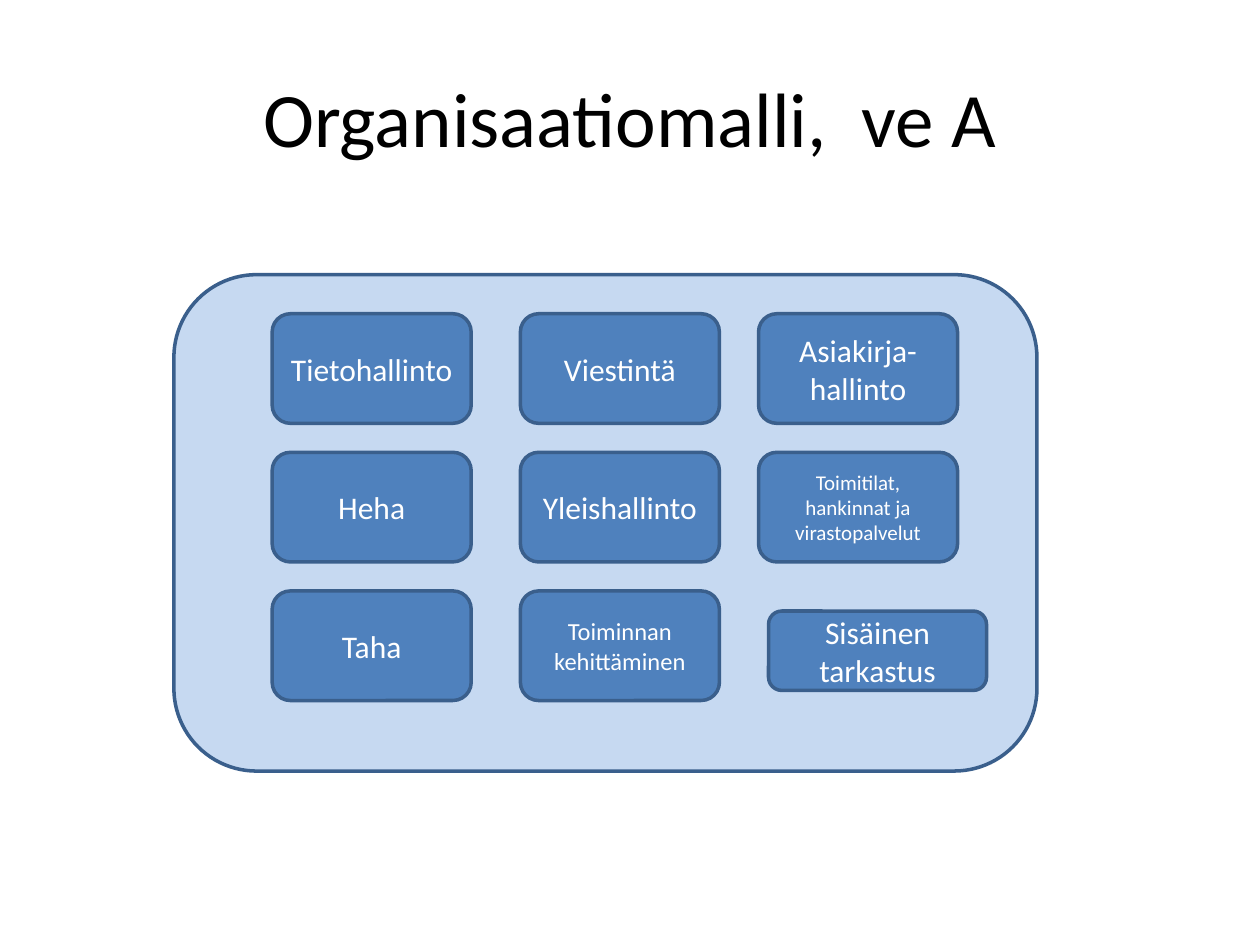
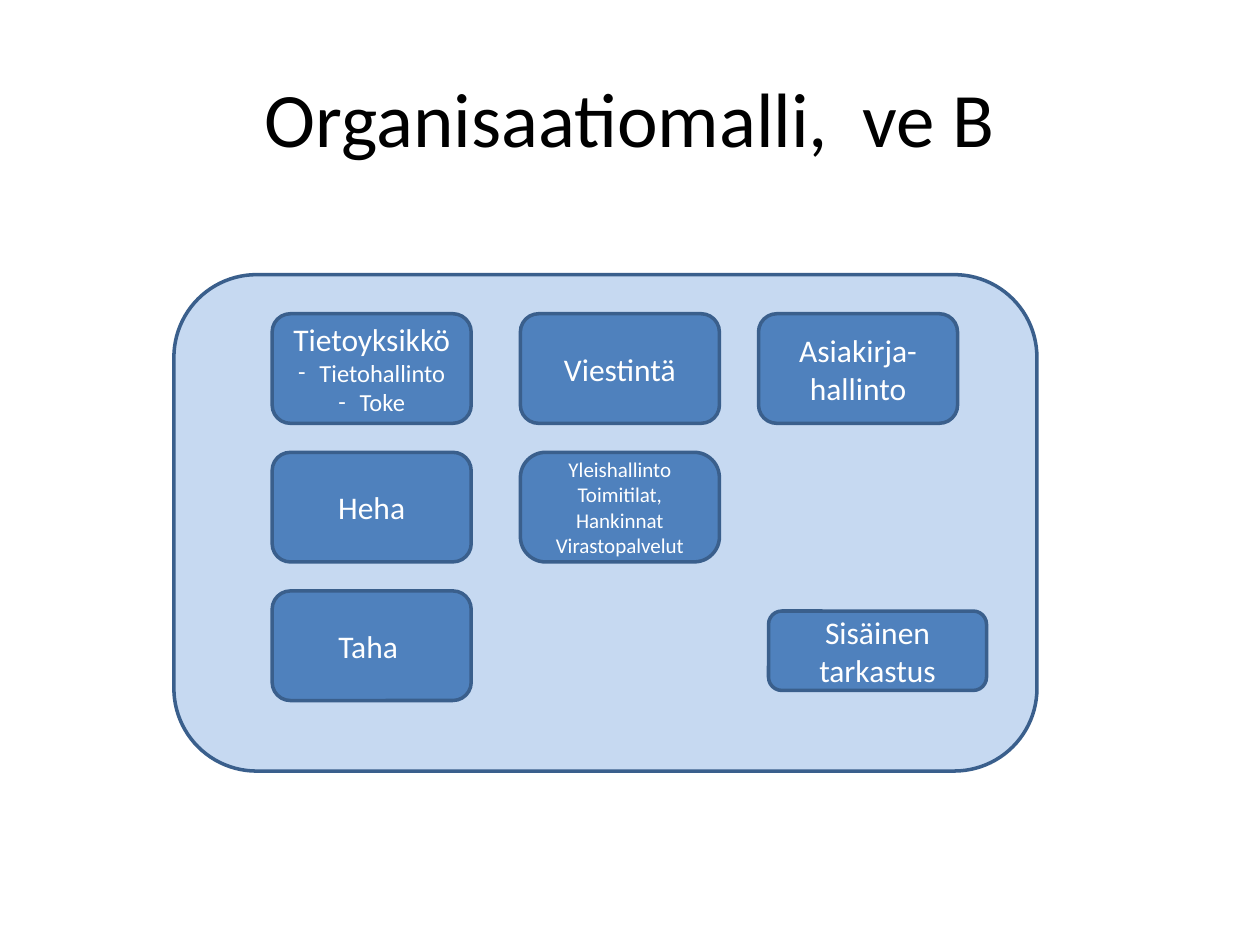
"""Builds two slides that compare organisation models A and B."""
from lxml.etree import SubElement
from pptx import Presentation
from pptx.dml.color import RGBColor
from pptx.enum.shapes import MSO_SHAPE
from pptx.enum.text import MSO_ANCHOR, PP_ALIGN
from pptx.oxml.ns import qn
from pptx.util import Inches, Pt

FONT = "Calibri"
PANEL_BLUE, UNIT_BLUE, OUTLINE_BLUE = "C6D9F1", "4F81BD", "3A5F8C"
WHITE, BLACK = "FFFFFF", "000000"
COLUMNS = [2.16, 4.13, 6.02]
ROWS = [2.49 + 1.1 * row for row in range(3)]
UNIT_WIDTH, UNIT_HEIGHT = 1.58, 0.87
BULLET_INDENT = Inches(0.17)


def colour(hex_value):
    return RGBColor.from_string(hex_value)


def add_box(slide, left, top, width, height, fill):
    box = slide.shapes.add_shape(
        MSO_SHAPE.ROUNDED_RECTANGLE,
        Inches(left), Inches(top), Inches(width), Inches(height))
    box.shadow.inherit = False
    box.fill.solid()
    box.fill.fore_color.rgb = colour(fill)
    box.line.color.rgb = colour(OUTLINE_BLUE)
    box.line.width = Pt(2)
    return box


SHARED_UNITS = {
    (0, 1): [("Heha", 18)],
    (1, 0): [("Viestintä", 18)],
    (2, 0): [("Asiakirja-", 18), ("hallinto", 18)],
}
MODELS = {
    "Organisaatiomalli,  ve A": {
        (0, 0): [("Tietohallinto", 18)],
        (0, 2): [("Taha", 18)],
        (1, 1): [("Yleishallinto", 18)],
        (1, 2): [("Toiminnan kehittäminen", 14)],
        (2, 1): [("Toimitilat, hankinnat ja virastopalvelut", 12)],
    },
    "Organisaatiomalli,  ve B": {
        (0, 0): [("Tietoyksikkö", 18), ("- Tietohallinto", 14), ("- Toke", 14)],
        (0, 2): [("Taha ", 18)],
        (1, 1): [(line, 12) for line in (
            "Yleishallinto", "Toimitilat,", "Hankinnat", "Virastopalvelut")],
    },
}

deck = Presentation()
deck.slide_width, deck.slide_height = Inches(10), Inches(7.5)

for heading, own_units in MODELS.items():
    slide = deck.slides.add_slide(deck.slide_layouts[5])
    title = slide.shapes.title
    title_place = {"left": 0.5, "top": 0.3, "width": 9, "height": 1.25}
    for side, length in title_place.items():
        setattr(title, side, Inches(length))
    title.text_frame.text = heading
    title.text_frame.vertical_anchor = MSO_ANCHOR.MIDDLE
    title_line = title.text_frame.paragraphs[0]
    title_line.alignment = PP_ALIGN.CENTER
    for attribute, value in {"name": FONT, "size": Pt(44)}.items():
        setattr(title_line.font, attribute, value)
    title_line.font.color.rgb = colour(BLACK)

    add_box(slide, 1.38, 2.18, 6.85, 3.94, PANEL_BLUE)

    units = [(COLUMNS[column], ROWS[row], UNIT_WIDTH, UNIT_HEIGHT, lines)
             for (column, row), lines in (SHARED_UNITS | own_units).items()]
    units.append((6.1, 4.85, 1.73, 0.63, [("Sisäinen tarkastus", 18)]))

    for left, top, width, height, lines in units:
        unit = add_box(slide, left, top, width, height, UNIT_BLUE)
        if len(lines) == 4:
            unit.adjustments[0] = 0.23
        frame = unit.text_frame
        frame.word_wrap = True
        frame.vertical_anchor = MSO_ANCHOR.MIDDLE
        for index, (wording, size) in enumerate(lines):
            paragraph = frame.add_paragraph() if index else frame.paragraphs[0]
            paragraph.alignment = PP_ALIGN.CENTER
            run = paragraph.add_run()
            run.text = wording.removeprefix("- ")
            for attribute, value in {"name": FONT, "size": Pt(size)}.items():
                setattr(run.font, attribute, value)
            run.font.color.rgb = colour(WHITE)
            if wording.startswith("- "):
                properties = paragraph._p.get_or_add_pPr()
                properties.set("marL", str(BULLET_INDENT))
                properties.set("indent", str(-BULLET_INDENT))
                SubElement(properties, qn("a:buFont"), typeface=FONT)
                SubElement(properties, qn("a:buChar"), char="-")

deck.save("out.pptx")
